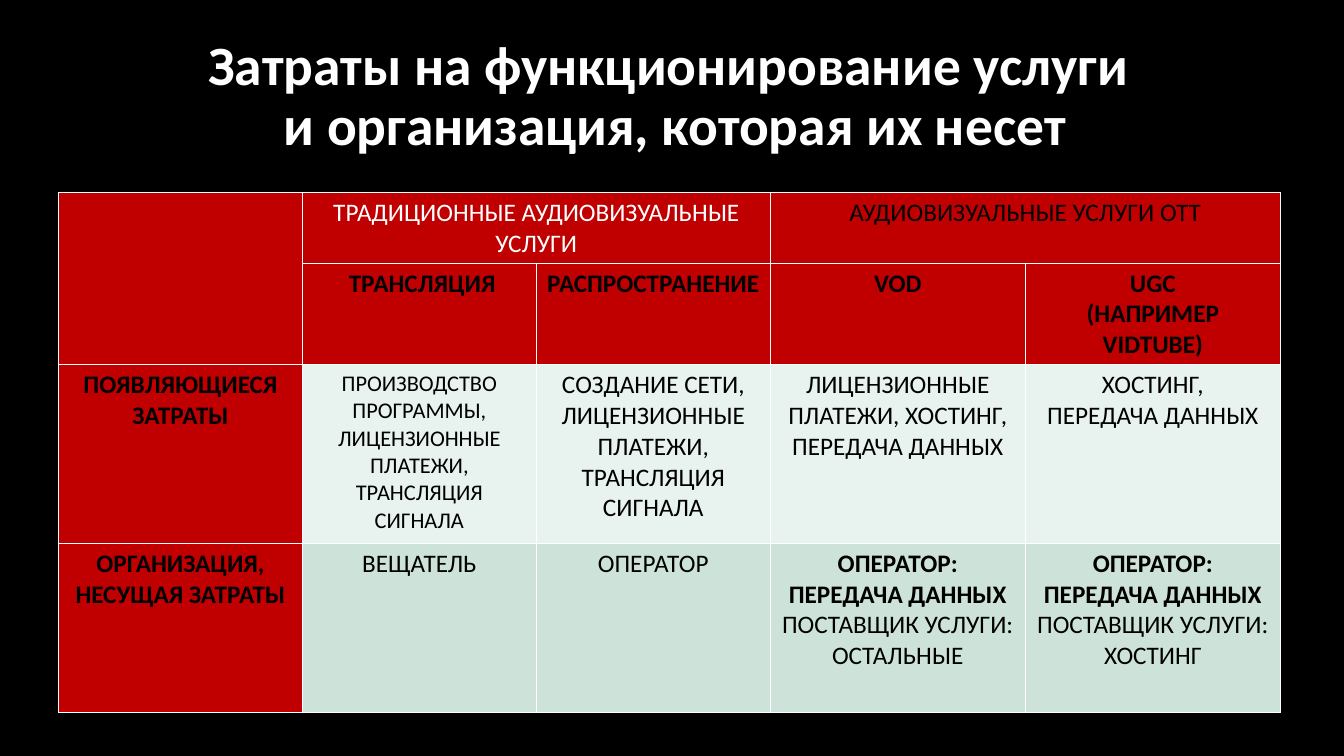
from lxml.etree import SubElement
from pptx import Presentation
from pptx.dml.color import RGBColor
from pptx.enum.text import MSO_ANCHOR, PP_ALIGN
from pptx.oxml.ns import qn
from pptx.util import Pt

EMU_PER_PX = 9144  # 100 px to the inch
SLIDE_SIZE = (1333, 750)
FONT = "Calibri"
BLACK, WHITE, RED = "000000", "FFFFFF", "C00000"
BODY_FILLS = ["E8F2EE", "CDE3DA"]

COLUMN_WIDTHS = [242, 232, 232, 253, 253]
ROW_HEIGHTS = [70, 101, 177, 168]
HEADER_ROWS = 2
MERGES = [((0, 0), (1, 0)), ((0, 1), (0, 2)), ((0, 3), (0, 4))]

# Each cell is a list of paragraphs
CELLS = [
    [[], ["ТРАДИЦИОННЫЕ АУДИОВИЗУАЛЬНЫЕ УСЛУГИ"], [],
     ["АУДИОВИЗУАЛЬНЫЕ УСЛУГИ OTT"], []],
    [[], [" ТРАНСЛЯЦИЯ"], ["РАСПРОСТРАНЕНИЕ"], ["VOD"],
     ["UGC", "(НАПРИМЕР VIDTUBE)"]],
    [["ПОЯВЛЯЮЩИЕСЯ ЗАТРАТЫ"],
     ["ПРОИЗВОДСТВО ПРОГРАММЫ, ЛИЦЕНЗИОННЫЕ ПЛАТЕЖИ, ТРАНСЛЯЦИЯ СИГНАЛА"],
     ["СОЗДАНИЕ СЕТИ, ЛИЦЕНЗИОННЫЕ ПЛАТЕЖИ, ТРАНСЛЯЦИЯ СИГНАЛА"],
     ["ЛИЦЕНЗИОННЫЕ ПЛАТЕЖИ, ХОСТИНГ,", "ПЕРЕДАЧА ДАННЫХ"],
     ["ХОСТИНГ,", "ПЕРЕДАЧА ДАННЫХ"]],
    [["ОРГАНИЗАЦИЯ, НЕСУЩАЯ ЗАТРАТЫ"], ["ВЕЩАТЕЛЬ"], ["ОПЕРАТОР"],
     ["ОПЕРАТОР: ПЕРЕДАЧА ДАННЫХ", "ПОСТАВЩИК УСЛУГИ: ОСТАЛЬНЫЕ"],
     ["ОПЕРАТОР: ПЕРЕДАЧА ДАННЫХ", "ПОСТАВЩИК УСЛУГИ: ХОСТИНГ"]],
]


def px(length):
    return length * EMU_PER_PX


def color(value):
    return RGBColor.from_string(value)


def format_paragraph(paragraph, size, font_color, bold):
    paragraph.alignment = PP_ALIGN.CENTER
    values = {"name": FONT, "size": Pt(size), "bold": bold}
    for run in paragraph.runs:
        for name, value in values.items():
            setattr(run.font, name, value)
        run.font.color.rgb = color(font_color)


def add_borders(cell, line_color, width):
    properties = cell._tc.get_or_add_tcPr()
    for side in ("lnL", "lnR", "lnT", "lnB"):
        line = SubElement(properties, qn(f"a:{side}"), w=str(Pt(width)))
        fill = SubElement(line, qn("a:solidFill"))
        SubElement(fill, qn("a:srgbClr"), val=line_color)


def cell_style(row, column, line):
    """Return the text size, colour and weight of one paragraph."""
    size = 16 if (row, column) == (2, 1) else 18
    font_color = WHITE if (row, column) == (0, 1) else BLACK
    is_label = row == 1 or column == 0
    is_operator_cost = row == 3 and column >= 3 and line == 0
    return size, font_color, is_label or is_operator_cost


def add_title(slide, box):
    shape = slide.shapes.add_textbox(*map(px, box))
    frame = shape.text_frame
    frame.word_wrap = True
    frame.vertical_anchor = MSO_ANCHOR.MIDDLE
    paragraph = frame.paragraphs[0]
    paragraph.text = "Затраты на функционирование услуги \vи организация, которая их несет"
    paragraph.line_spacing = 0.9
    format_paragraph(paragraph, 39.6, WHITE, True)


def add_cost_table(slide, left, top):
    box = (left, top, sum(COLUMN_WIDTHS), sum(ROW_HEIGHTS))
    shape = slide.shapes.add_table(len(ROW_HEIGHTS), len(COLUMN_WIDTHS), *map(px, box))
    table = shape.table
    table.first_row = table.horz_banding = False
    for column, width in zip(table.columns, COLUMN_WIDTHS):
        column.width = px(width)
    for row, height in zip(table.rows, ROW_HEIGHTS):
        row.height = px(height)

    # Cell text, borders and fills
    for row, texts in enumerate(CELLS):
        for column, lines in enumerate(texts):
            cell = table.cell(row, column)
            cell.text = "\n".join(lines)
            for line, paragraph in enumerate(cell.text_frame.paragraphs):
                format_paragraph(paragraph, *cell_style(row, column, line))
            add_borders(cell, WHITE, 1)
            is_header = row < HEADER_ROWS or column == 0
            cell.fill.solid()
            cell.fill.fore_color.rgb = color(RED if is_header else BODY_FILLS[row - HEADER_ROWS])

    for first, last in MERGES:
        table.cell(*first).merge(table.cell(*last))


def main():
    presentation = Presentation()
    presentation.slide_width, presentation.slide_height = map(px, SLIDE_SIZE)
    slide = presentation.slides.add_slide(presentation.slide_layouts[6])
    slide.background.fill.solid()
    slide.background.fill.fore_color.rgb = color(BLACK)
    add_title(slide, (79, 28, 1181, 138))
    add_cost_table(slide, 58, 191)
    presentation.save("out.pptx")


if __name__ == "__main__":
    main()
